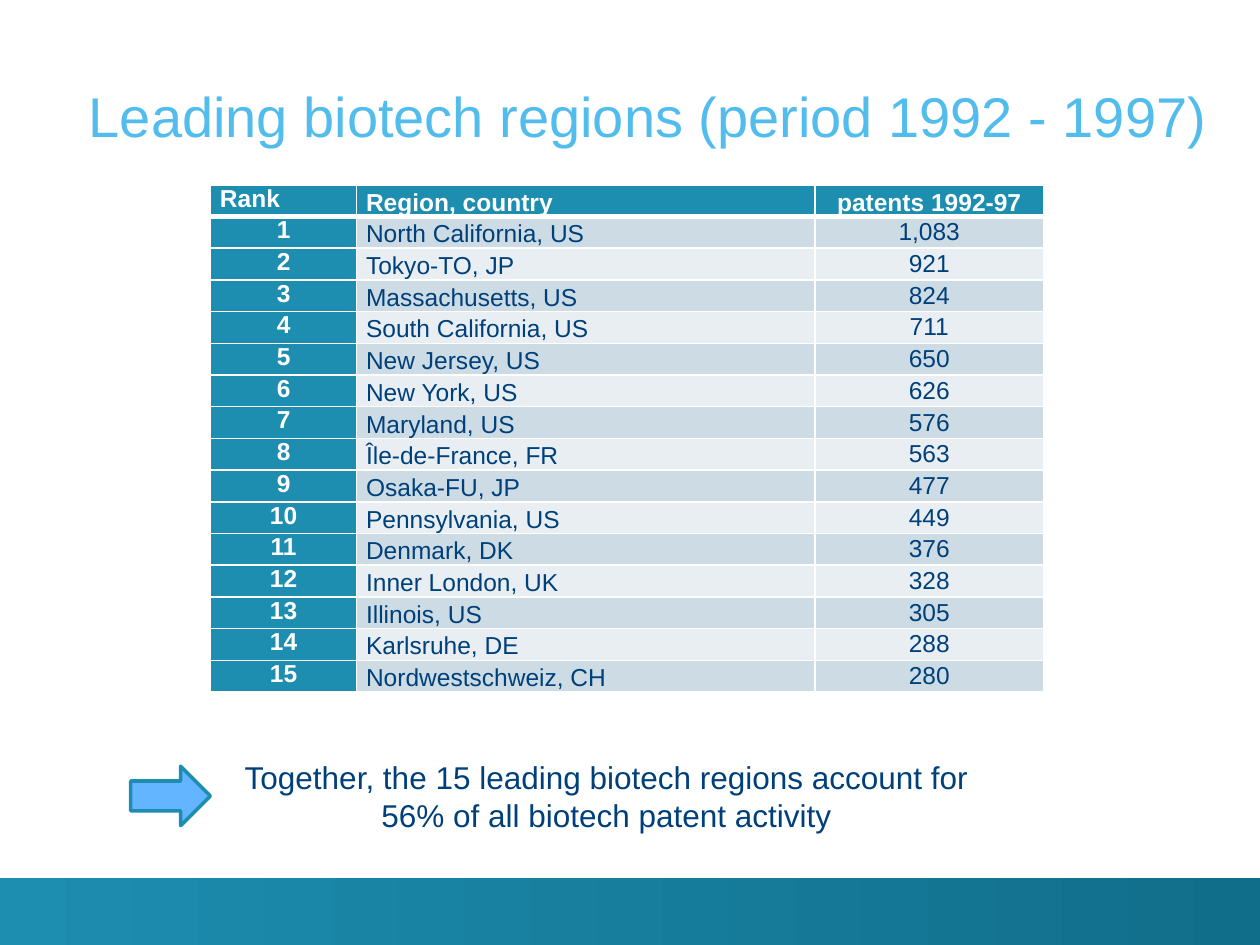
from lxml.etree import SubElement, fromstring
from pptx import Presentation
from pptx.dml.color import RGBColor as RGB
from pptx.enum.shapes import MSO_SHAPE as Shape
from pptx.enum.text import MSO_ANCHOR as Anchor, MSO_AUTO_SIZE as AutoSize, PP_ALIGN as Align
from pptx.oxml.ns import nsdecls, qn
from pptx.util import Pt

TITLE = "Leading biotech regions (period 1992 - 1997)"
HEADER = ("Rank", "Region, country", "patents 1992-97")
REGIONS = [
    ("North California, US", "1,083"),
    ("Tokyo-TO, JP", "921"),
    ("Massachusetts, US", "824"),
    ("South California, US", "711"),
    ("New Jersey, US", "650"),
    ("New York, US", "626"),
    ("Maryland, US", "576"),
    ("Île-de-France, FR", "563"),
    ("Osaka-FU, JP", "477"),
    ("Pennsylvania, US", "449"),
    ("Denmark, DK", "376"),
    ("Inner London, UK", "328"),
    ("Illinois, US", "305"),
    ("Karlsruhe, DE", "288"),
    ("Nordwestschweiz, CH", "280"),
]
CONCLUSION = [
    "Together, the 15 leading biotech regions account for",
    "56% of all biotech patent activity",
]
COLORS = {
    "title": "52BDEC", "text": "00407A", "white": "FFFFFF", "teal": "1D8DB0",
    "deep teal": "116E8A", "odd row": "CDDBE4", "even row": "E8EEF2", "arrow": "64B5FF",
}
COLUMN_WIDTHS = (83.5, 262, 130.5)
ROW_HEIGHT = 18.1


def color(name):
    return RGB.from_string(COLORS[name])


def style(paragraph, size, color_name, bold=False, align=None):
    paragraph.alignment = align
    font = paragraph.font
    font.name, font.size, font.bold = "Arial", Pt(size), bold
    font.color.rgb = color(color_name)


def set_borders(cell, top, bottom):
    """Draw white cell borders; the lines must precede the fill."""
    widths = {"lnL": 1, "lnR": 1, "lnT": top, "lnB": bottom}
    properties = cell._tc.get_or_add_tcPr()
    for position, (side, width) in enumerate(widths.items()):
        properties.insert(position, fromstring(
            f'<a:{side} {nsdecls("a")} w="{Pt(width)}"><a:solidFill>'
            f'<a:srgbClr val="{COLORS["white"]}"/></a:solidFill></a:{side}>'))


def fill_cell(cell, text, row, column):
    heading = row == 0 or column == 0
    cell.text = text
    cell.margin_left = cell.margin_right = Pt(5.4)
    cell.margin_top = cell.margin_bottom = 0
    if row and column == 2:
        cell.vertical_anchor = Anchor.MIDDLE
    paragraph = cell.text_frame.paragraphs[0]
    centered = column == 2 or (row and column == 0)
    style(paragraph, 14, "white" if heading else "text", heading,
          Align.CENTER if centered else Align.LEFT)
    if column == 1 or (row == 0 and column == 2):
        paragraph.line_spacing = 1.15
    cell.fill.solid()
    cell.fill.fore_color.rgb = color(
        "teal" if heading else "odd row" if row % 2 else "even row")
    set_borders(cell, top=3 if row == 1 else 1, bottom=3 if row == 0 else 1)


prs = Presentation()
prs.slide_width, prs.slide_height = Pt(720), Pt(540)
slide = prs.slides.add_slide(prs.slide_layouts[5])
shapes = slide.shapes

# Footer band
band = shapes.add_shape(Shape.RECTANGLE, 0, Pt(501.8), Pt(720), Pt(38.2))
band.shadow.inherit = False
band.line.fill.background()
band.fill.gradient()
band.fill.gradient_angle = 0
for stop, name, position in zip(band.fill.gradient_stops, ("teal", "deep teal"), (0, 1)):
    stop.color.rgb = color(name)
    stop.position = position

# Title
title = shapes.title
title.left, title.top, title.width, title.height = Pt(42.5), Pt(14.4), Pt(656), Pt(70.5)
frame = title.text_frame
frame.text = TITLE
frame.auto_size = AutoSize.NONE
frame.word_wrap = True
frame.vertical_anchor = Anchor.BOTTOM
frame.margin_left = frame.margin_right = frame.margin_top = frame.margin_bottom = 0
style(frame.paragraphs[0], 32, "title", align=Align.CENTER)

# Ranking table
rows = [HEADER] + [(str(rank), *region) for rank, region in enumerate(REGIONS, 1)]
table = shapes.add_table(len(rows), len(HEADER), Pt(120.3), Pt(105.6),
                         Pt(sum(COLUMN_WIDTHS)), Pt(ROW_HEIGHT * len(rows))).table
table.first_col = True
for column, width in zip(table.columns, COLUMN_WIDTHS):
    column.width = Pt(width)
for r, values in enumerate(rows):
    table.rows[r].height = Pt(ROW_HEIGHT)
    for c, value in enumerate(values):
        fill_cell(table.cell(r, c), value, r, c)

# Conclusion
conclusion = shapes.add_textbox(Pt(42.5), Pt(429.8), Pt(618), Pt(51)).text_frame
conclusion.word_wrap = True
conclusion.text = "\n".join(CONCLUSION)
for paragraph in conclusion.paragraphs:
    style(paragraph, 18, "text", align=Align.CENTER)
# The first line sits slightly left of centre
conclusion.paragraphs[0]._p.get_or_add_pPr().set("marR", str(Pt(10)))

# Arrow pointing to the conclusion
arrow = shapes.add_shape(Shape.RIGHT_ARROW, Pt(74.6), Pt(437.8), Pt(45.6), Pt(34))
arrow.shadow.inherit = False
arrow.fill.solid()
arrow.fill.fore_color.rgb = color("arrow")
arrow.line.color.rgb = color("teal")
arrow.line.width = Pt(2)

prs.save("out.pptx")
